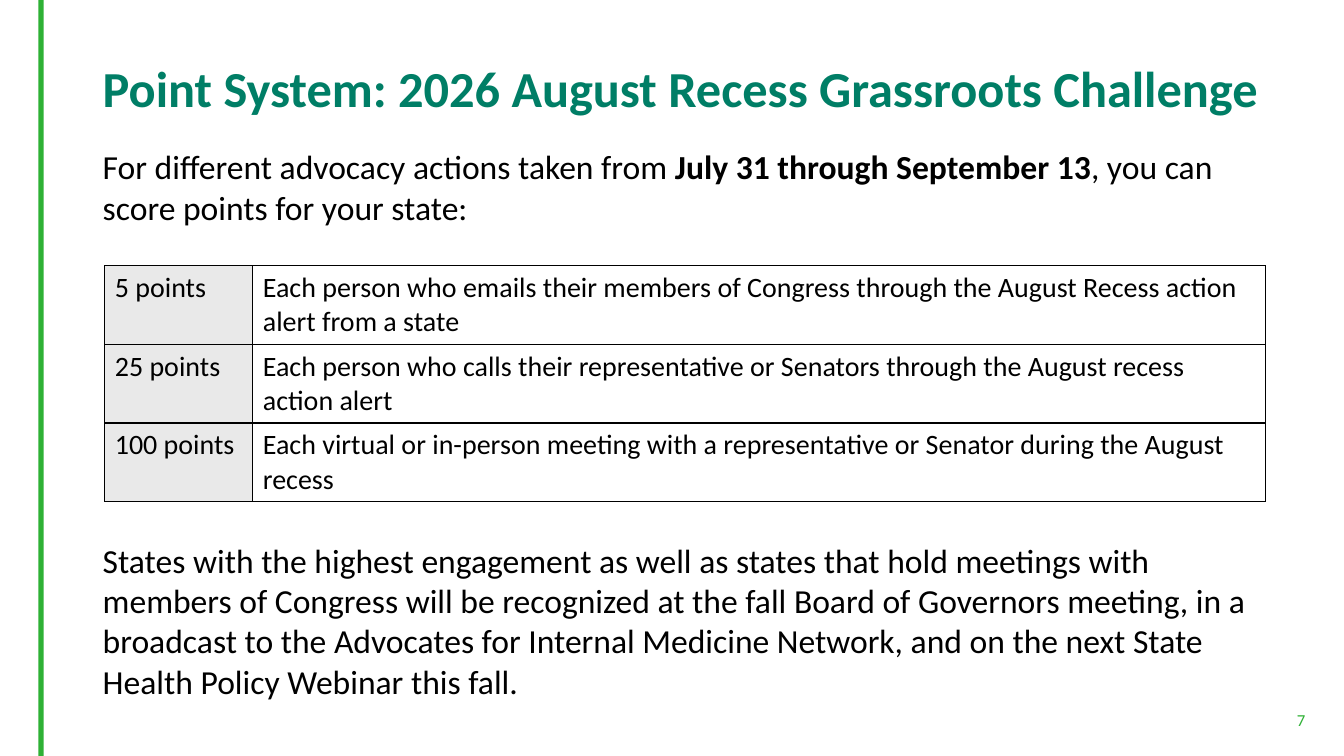
from dataclasses import dataclass

from lxml import etree
from pptx import Presentation
from pptx.dml.color import RGBColor
from pptx.enum.shapes import MSO_SHAPE
from pptx.enum.text import MSO_ANCHOR, PP_ALIGN
from pptx.oxml.ns import qn
from pptx.util import Cm, Pt

RECTANGLE = MSO_SHAPE.RECTANGLE
TOP, MIDDLE, BOTTOM = MSO_ANCHOR.TOP, MSO_ANCHOR.MIDDLE, MSO_ANCHOR.BOTTOM
LEFT, RIGHT = PP_ALIGN.LEFT, PP_ALIGN.RIGHT

FONT = "Calibri"
COLORS = {
    "bar": "2EB135",
    "title": "007E66",
    "text": "000000",
    "points": "E9E9E9",
    "action": "FFFFFF",
}


@dataclass(frozen=True)
class Box:
    left: float
    top: float
    width: float
    height: float

    def lengths(self) -> tuple:
        return Cm(self.left), Cm(self.top), Cm(self.width), Cm(self.height)


@dataclass(frozen=True)
class Award:
    points: str
    action: str


AWARDS = [
    Award("5 points", "Each person who emails their members of Congress through "
          "the August Recess action alert from a state"),
    Award("25 points", "Each person who calls their representative or Senators "
          "through the August recess action alert"),
    Award("100 points", "Each virtual or in-person meeting with a representative "
          "or Senator during the August recess"),
]
INTRODUCTION = [
    ("For different advocacy actions taken from ", False),
    ("July 31 through September 13", True),
    (", you can score points for your state:", False),
]
RECOGNITION = (
    "States with the highest engagement as well as states that hold meetings with "
    "members of Congress will be recognized at the fall Board of Governors meeting, "
    "in a broadcast to the Advocates for Internal Medicine Network, and on the next "
    "State Health Policy Webinar this fall."
)


def color(name: str) -> RGBColor:
    return RGBColor.from_string(COLORS[name])


def write_text(frame, text, *, size: float, color_name: str = "text",
               bold: bool = False, align=LEFT, line_spacing: float = 1.0) -> None:
    paragraph = frame.paragraphs[0]
    paragraph.alignment = align
    paragraph.line_spacing = line_spacing
    parts = [(text, bold)] if isinstance(text, str) else text
    for words, is_bold in parts:
        run = paragraph.add_run()
        run.text = words
        run.font.name = FONT
        run.font.size = Pt(size)
        run.font.bold = is_bold
        run.font.color.rgb = color(color_name)


def add_text(slide, box: Box, text, *, anchor=TOP, **text_format) -> None:
    frame = slide.shapes.add_textbox(*box.lengths()).text_frame
    frame.word_wrap = True
    frame.vertical_anchor = anchor
    write_text(frame, text, **text_format)


def add_bar(slide, box: Box) -> None:
    shape = slide.shapes.add_shape(RECTANGLE, *box.lengths())
    shape.shadow.inherit = False
    shape.fill.solid()
    shape.fill.fore_color.rgb = color("bar")
    shape.line.fill.background()


def set_borders(cell) -> None:
    properties = cell._tc.get_or_add_tcPr()
    for position, side in enumerate(("lnL", "lnR", "lnT", "lnB")):
        line = etree.Element(qn(f"a:{side}"), w=str(Pt(1)))
        fill = etree.SubElement(line, qn("a:solidFill"))
        etree.SubElement(fill, qn("a:srgbClr"), val=COLORS["text"])
        properties.insert(position, line)


def add_awards(slide, box: Box, points_width: float) -> None:
    table = slide.shapes.add_table(len(AWARDS), 2, *box.lengths()).table
    table.first_row = False
    table.horz_banding = False
    table.columns[0].width = Cm(points_width)
    table.columns[1].width = Cm(box.width - points_width)
    for row, award in enumerate(AWARDS):
        for column, name in enumerate(("points", "action")):
            cell = table.cell(row, column)
            cell.fill.solid()
            cell.fill.fore_color.rgb = color(name)
            set_borders(cell)
            write_text(cell.text_frame, getattr(award, name), size=20)


def main() -> None:
    presentation = Presentation()
    presentation.slide_width = Cm(33.87)
    presentation.slide_height = Cm(19.05)
    slide = presentation.slides.add_slide(presentation.slide_layouts[6])

    add_bar(slide, Box(0.97, 0, 0.13, 19.05))
    add_text(slide, Box(2.34, 1.02, 30.45, 2.54),
             "Point System: 2026 August Recess Grassroots Challenge",
             anchor=MIDDLE, size=36, color_name="title", bold=True, line_spacing=0.9)
    add_text(slide, Box(2.34, 3.56, 29.57, 2.4), INTRODUCTION, size=24)
    add_awards(slide, Box(2.64, 6.7, 29.26, 5.94), points_width=3.73)
    add_text(slide, Box(2.34, 13.47, 29.57, 4.4), RECOGNITION, size=24)
    add_text(slide, Box(24.31, 17.75, 8.84, 0.76), "7",
             anchor=BOTTOM, size=12, color_name="bar", align=RIGHT)

    presentation.save("out.pptx")


if __name__ == "__main__":
    main()
